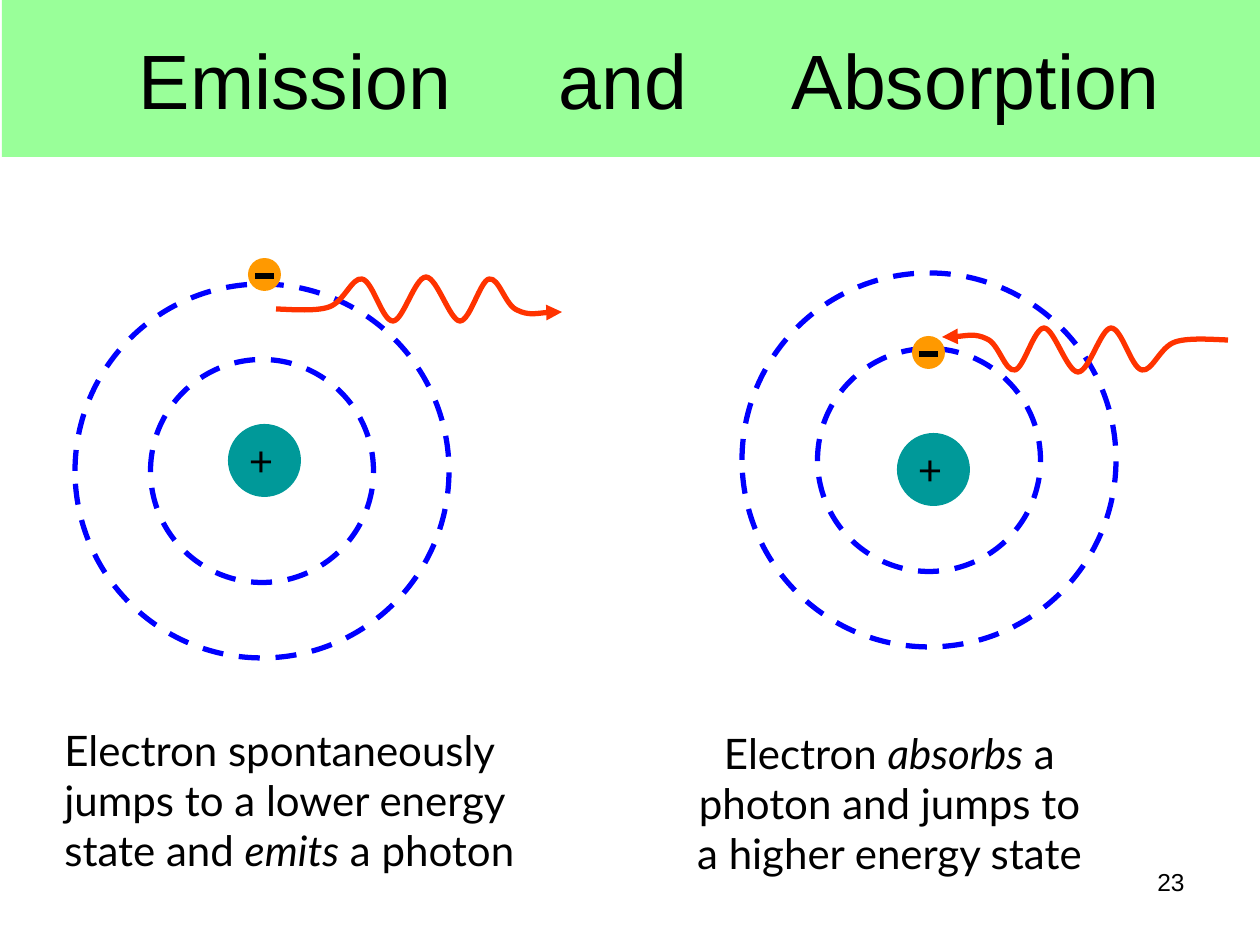
from lxml import etree
from pptx import Presentation, util as u
from pptx.dml.color import RGBColor
from pptx.enum import dml, shapes, text
from pptx.oxml.ns import qn

PX = u.Inches(1) / 126
OVAL = shapes.MSO_SHAPE.OVAL
LEFT, MID, RIGHT = text.PP_ALIGN.LEFT, text.PP_ALIGN.CENTER, text.PP_ALIGN.RIGHT


def paint(fill, tone):
    fill.solid()
    fill.fore_color.rgb = RGBColor.from_string(tone)


def write(frame, lines, size, font, align):
    frame.word_wrap = True
    for i, line in enumerate(lines):
        para = frame.paragraphs[0] if i == 0 else frame.add_paragraph()
        para.alignment = align
        for n, part in enumerate(line.split("*")):
            run = para.add_run()
            run.text = part
            run.font.size = u.Pt(size)
            run.font.name = font
            run.font.italic = n % 2 == 1
            paint(run.font.fill, "000000")


deck = Presentation()
deck.slide_width, deck.slide_height = u.Inches(10), u.Inches(7.5)
slide = deck.slides.add_slide(deck.slide_layouts[6])
items = slide.shapes

band = items.add_shape(shapes.MSO_SHAPE.RECTANGLE, *[int(v * PX) for v in (2, 0, 1258, 157)])
band.shadow.inherit = False
band.line.fill.background()
paint(band.fill, "99FF99")
frame = band.text_frame
frame.margin_left = frame.margin_right = 0
frame.vertical_anchor = text.MSO_ANCHOR.MIDDLE
write(frame, ["\tEmission\tand\tAbsorption"], 44, "Arial", LEFT)
stops = etree.SubElement(frame.paragraphs[0]._p.get_or_add_pPr(), qn("a:tabLst"))
for stop in (137, 557, 790):
    etree.SubElement(stops, qn("a:tab"), pos=str(int(stop * PX)), algn="l")

for x, y in ((262, 471), (929, 460)):
    orbits = items.add_group_shape()
    for size in (374, 223):
        ring = orbits.shapes.add_shape(
            OVAL, *[int(v * PX) for v in (x - size / 2, y - size / 2, size, size)])
        ring.shadow.inherit = False
        ring.fill.background()
        paint(ring.line.fill, "0000FF")
        ring.line.width = u.Pt(3)
        ring.line.dash_style = dml.MSO_LINE.DASH

for x, y in ((248, 258), (912, 336)):
    group = items.add_group_shape()
    ball = group.shapes.add_shape(OVAL, *[int(v * PX) for v in (x, y, 33, 33)])
    ball.shadow.inherit = False
    ball.line.fill.background()
    paint(ball.fill, "FF9900")
    minus = group.shapes.add_connector(
        shapes.MSO_CONNECTOR.STRAIGHT, *[int(v * PX) for v in (x + 7, y + 18, x + 26, y + 18)])
    paint(minus.line.fill, "000000")
    minus.line.width = u.Pt(3)
    etree.SubElement(minus._element.spPr, qn("a:effectLst"))

wave = [
    (276, 309),
    (285, 309), (315, 312), (329, 307),
    (344, 302), (352, 277), (362, 279),
    (373, 281), (382, 321), (393, 321),
    (403, 321), (415, 277), (426, 277),
    (437, 277), (450, 321), (460, 321),
    (470, 321), (480, 281), (489, 279),
    (499, 277), (505, 305), (517, 310),
    (529, 316), (553, 311), (562, 312),
]
for points in (wave, [(1504 - x, 649 - y) for x, y in wave]):
    pen = items.build_freeform(*points[0], scale=PX)
    pen.add_line_segments(points[1:], close=False)
    photon = pen.convert_to_shape()
    photon.shadow.inherit = False
    photon.fill.background()
    paint(photon.line.fill, "FF3300")
    photon.line.width = u.Pt(3)
    props = photon._element.spPr
    etree.SubElement(props.find(qn("a:ln")), qn("a:tailEnd"), type="triangle")
    steps = list(props.iter(qn("a:lnTo")))
    trace = steps[0].getparent()
    for i in range(0, len(steps), 3):
        curve = etree.SubElement(trace, qn("a:cubicBezTo"))
        for step in steps[i:i + 3]:
            curve.append(step[0])
            trace.remove(step)

for x, y in ((228, 424), (897, 433)):
    core = items.add_shape(OVAL, *[int(v * PX) for v in (x, y, 73, 73)])
    core.shadow.inherit = False
    core.line.fill.background()
    paint(core.fill, "009999")
    plus = items.add_textbox(*[int(v * PX) for v in (x + 5, y + 4, 56, 63)])
    write(plus.text_frame, ["+"], 24, "Lato", MID)

notes = (
    ((52, 718, 498, 165), 24, "Lato", LEFT,
     ["Electron spontaneously", "jumps to a lower energy", "state and *emits* a photon"]),
    ((675, 721, 429, 165), 24, "Lato", MID,
     ["Electron *absorbs* a", "photon and jumps to", "a higher energy state"]),
    ((903, 861, 294, 65), 14, "Arial", RIGHT, ["23"]),
)
for area, size, font, align, lines in notes:
    box = items.add_textbox(*[int(v * PX) for v in area])
    write(box.text_frame, lines, size, font, align)

deck.save("out.pptx")
